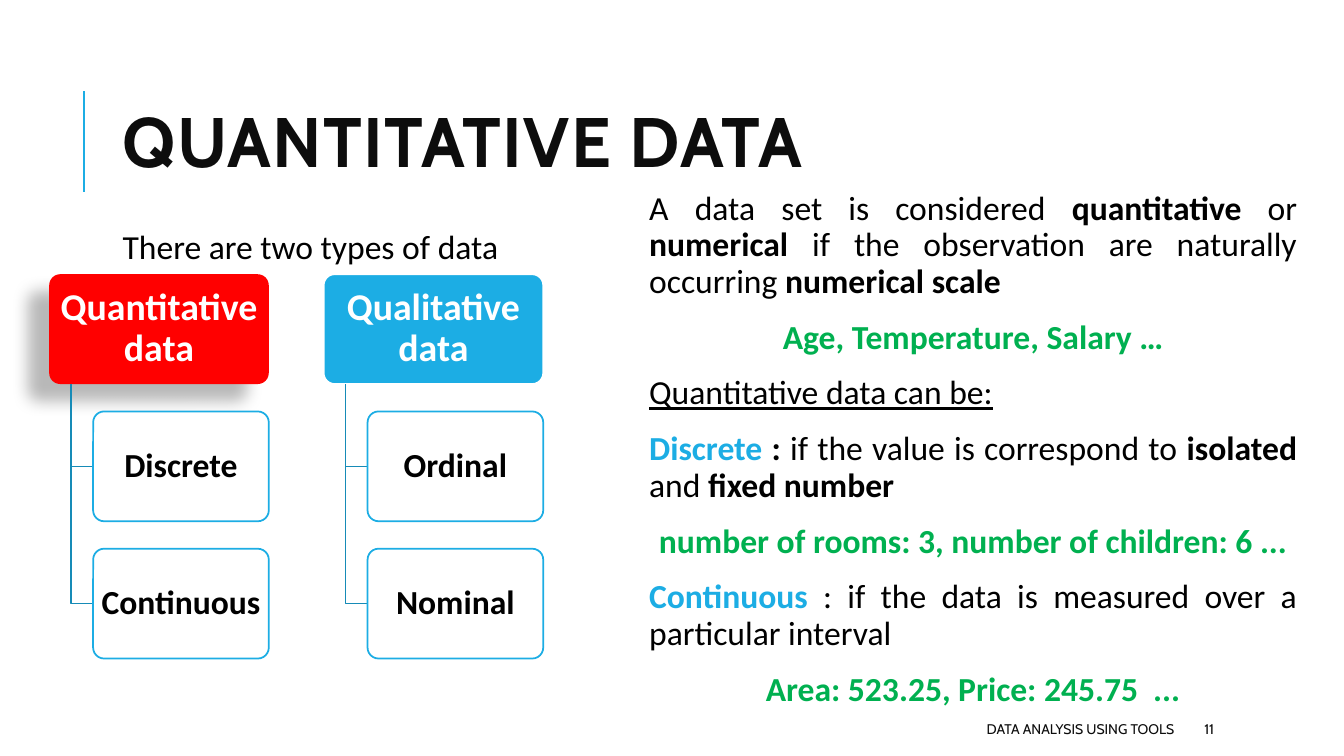
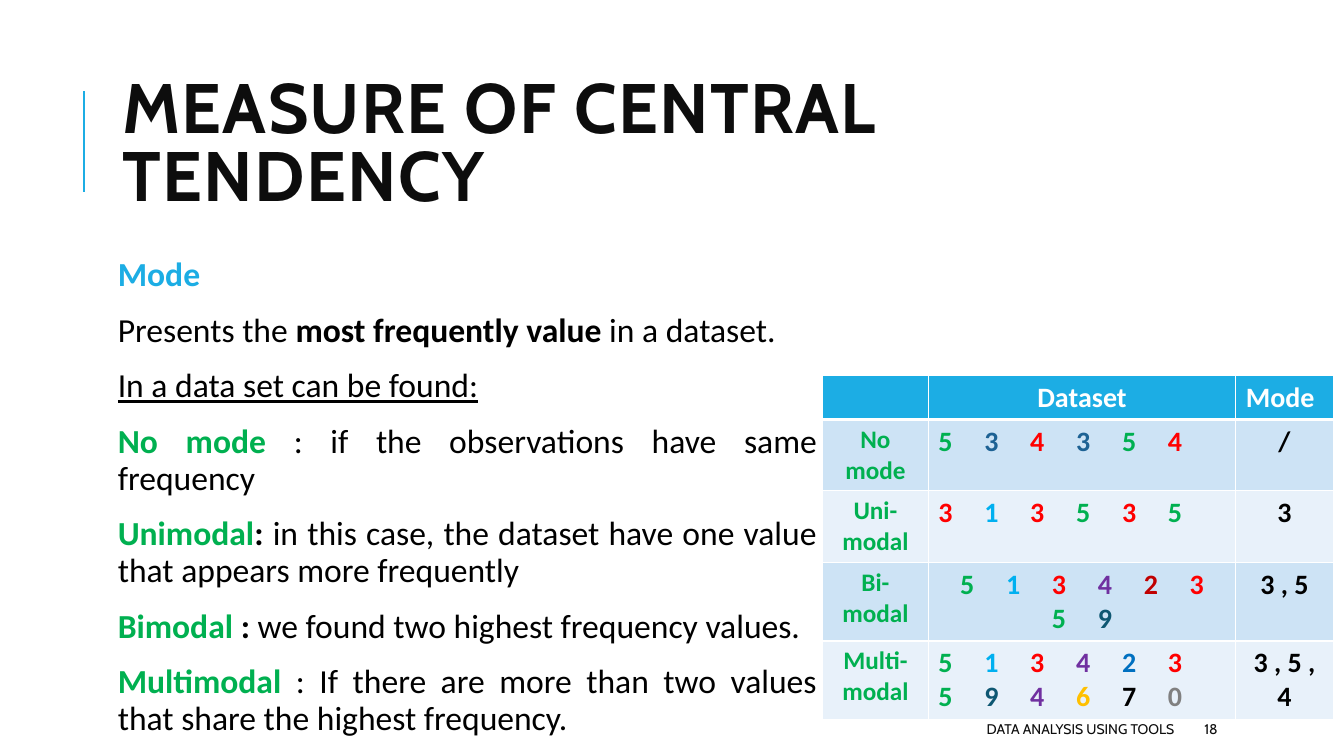
from typing import NamedTuple

from lxml.etree import SubElement
from pptx import Presentation
from pptx.dml.color import RGBColor
from pptx.enum.shapes import MSO_CONNECTOR, MSO_SHAPE
from pptx.enum.text import MSO_ANCHOR as Anchor, PP_ALIGN as Align
from pptx.oxml.ns import qn
from pptx.util import Cm, Pt

# Colours
BLACK = RGBColor(0x00, 0x00, 0x00)
WHITE = RGBColor(0xFF, 0xFF, 0xFF)
INK = RGBColor(0x0D, 0x0D, 0x0D)
ACCENT = RGBColor(0x1C, 0xAD, 0xE4)
STEM = RGBColor(0x16, 0x8B, 0xB7)
RED = RGBColor(0xFF, 0x00, 0x00)
GREEN = RGBColor(0x00, 0xB0, 0x50)
NAVY = RGBColor(0x1D, 0x62, 0x94)
SKY = RGBColor(0x00, 0xB0, 0xF0)
PURPLE = RGBColor(0x70, 0x30, 0xA0)
CRIMSON = RGBColor(0xC0, 0x00, 0x00)
BLUE = RGBColor(0x00, 0x70, 0xC0)
TEAL = RGBColor(0x0E, 0x57, 0x72)
GOLD = RGBColor(0xFF, 0xC0, 0x00)
GRAY = RGBColor(0x80, 0x80, 0x80)
BAND_DARK = RGBColor(0xCD, 0xE3, 0xF5)
BAND_LIGHT = RGBColor(0xE8, 0xF1, 0xFA)

HEADING_FONT = "Cabin"
BODY_FONT = "Calibri"
FOOTER = "DATA ANALYSIS USING TOOLS"


class Box(NamedTuple):
    """A region of the slide, in centimetres."""
    left: float
    top: float
    width: float
    height: float

    def lengths(self):
        return [Cm(value) for value in self]


class Style(NamedTuple):
    color: RGBColor = BLACK
    bold: bool = False
    underline: bool = False


PLAIN = Style()
BOLD = Style(bold=True)
UNDERLINED = Style(underline=True)
TERM = Style(ACCENT, bold=True)
EXAMPLE = Style(GREEN, bold=True)

TITLE_BOX = Box(2.84, 1.63, 27, 4.17)
FOOTER_BOX = Box(13.46, 17.98, 16.38, 0.76)
NUMBER_BOX = Box(30.1, 17.98, 2.69, 0.76)


def format_run(run, size, style=PLAIN, font=BODY_FONT):
    run.font.name = font
    run.font.size = Pt(size)
    run.font.bold = style.bold
    run.font.underline = style.underline
    run.font.color.rgb = style.color


def write(paragraph, text, size, style=PLAIN, font=BODY_FONT, align=Align.LEFT):
    paragraph.text = text
    paragraph.alignment = align
    for run in paragraph.runs:
        format_run(run, size, style, font)


def add_text_frame(slide, box, anchor=Anchor.TOP):
    frame = slide.shapes.add_textbox(*box.lengths()).text_frame
    frame.word_wrap = True
    frame.vertical_anchor = anchor
    return frame


def set_insets(frame, horizontal, vertical):
    frame.margin_left = frame.margin_right = Cm(horizontal)
    frame.margin_top = frame.margin_bottom = Cm(vertical)


# Parts shared by all slides
def add_frame(slide, title, number):
    rule = slide.shapes.add_connector(
        MSO_CONNECTOR.STRAIGHT, Cm(2.11), Cm(4.83), Cm(2.11), Cm(2.29))
    rule.line.color.rgb = ACCENT
    rule.line.width = Pt(1.5)
    SubElement(rule._element.spPr, qn("a:effectLst"))

    paragraph = add_text_frame(slide, TITLE_BOX, Anchor.MIDDLE).paragraphs[0]
    write(paragraph, title, 50, Style(INK, bold=True), HEADING_FONT)
    paragraph.line_spacing = 0.8
    paragraph.runs[0].font._element.set("spc", "100")

    for box, text, align in ((FOOTER_BOX, FOOTER, Align.RIGHT),
                             (NUMBER_BOX, str(number), Align.LEFT)):
        frame = add_text_frame(slide, box, Anchor.MIDDLE)
        write(frame.paragraphs[0], text, 10, Style(INK), HEADING_FONT, align)


# Body text: each paragraph is an alignment and its styled pieces
def add_body(slide, box, paragraphs):
    frame = add_text_frame(slide, box)
    set_insets(frame, 0.13, 0.13)
    for index, (align, pieces) in enumerate(paragraphs):
        paragraph = frame.add_paragraph() if index else frame.paragraphs[0]
        paragraph.alignment = align
        paragraph.line_spacing = 0.9
        paragraph.space_before = Pt(12)
        paragraph.space_after = Pt(2)
        for text, style in pieces:
            run = paragraph.add_run()
            run.text = text
            format_run(run, 24, style)


# Tree of data types
def add_node(slide, box, text, size, text_color, fill, line=None):
    node = slide.shapes.add_shape(MSO_SHAPE.ROUNDED_RECTANGLE, *box.lengths())
    node.adjustments[0] = 0.1
    node.shadow.inherit = False
    node.fill.solid()
    node.fill.fore_color.rgb = fill
    if line is None:
        node.line.fill.background()
    else:
        node.line.color.rgb = line
        node.line.width = Pt(1.25)
    frame = node.text_frame
    frame.word_wrap = True
    frame.vertical_anchor = Anchor.MIDDLE
    set_insets(frame, 0.12, 0.08)
    write(frame.paragraphs[0], text, size, Style(text_color, bold=True),
          align=Align.CENTER)
    frame.paragraphs[0].line_spacing = 0.9
    return node


def add_drop_shadow(shape):
    effects = shape._element.spPr.find(qn("a:effectLst"))
    shadow = SubElement(effects, qn("a:outerShdw"), blurRad=str(Pt(11.8)),
                        dist=str(Pt(19.7)), dir="8460000", rotWithShape="0")
    color = SubElement(shadow, qn("a:srgbClr"), val=str(BLACK))
    SubElement(color, qn("a:alpha"), val="28000")


def add_stem(slide, left, top, right, bottom):
    builder = slide.shapes.build_freeform(Cm(left), Cm(top))
    builder.add_line_segments(
        [(Cm(left), Cm(bottom)), (Cm(right), Cm(bottom))], close=False)
    stem = builder.convert_to_shape()
    stem.shadow.inherit = False
    stem.fill.background()
    stem.line.color.rgb = STEM
    stem.line.width = Pt(1.25)


def add_tree(slide, box, branches):
    # Columns are a quarter of a node apart, rows a quarter of its height
    count = len(branches)
    width = box.width / (count + 0.25 * (count - 1))
    height = width / 2
    for column, (heading, fill, line, children) in enumerate(branches):
        left = box.left + column * 1.25 * width
        head = add_node(slide, Box(left, box.top, width, height),
                        heading, 27, WHITE, fill, line)
        if fill == RED:
            add_drop_shadow(head)
        for row, child in enumerate(children, 1):
            top = box.top + row * 1.25 * height
            child_left = left + 0.2 * width
            add_stem(slide, left + 0.1 * width, box.top + height,
                     child_left, top + height / 2)
            add_node(slide, Box(child_left, top, 0.8 * width, height),
                     child, 24, BLACK, WHITE, ACCENT)


# Table of modes
def style_cell(cell, fill, bottom=1):
    cell.fill.solid()
    cell.fill.fore_color.rgb = fill
    properties = cell._tc.get_or_add_tcPr()
    sides = (("lnL", 1), ("lnR", 1), ("lnT", 1), ("lnB", bottom))
    for index, (side, points) in enumerate(sides):
        border = SubElement(properties, qn(f"a:{side}"), w=str(Pt(points)))
        solid = SubElement(border, qn("a:solidFill"))
        SubElement(solid, qn("a:srgbClr"), val=str(WHITE))
        properties.insert(index, border)


def write_digits(paragraph, digits, align):
    paragraph.alignment = align
    for index, (digit, color) in enumerate(digits):
        if index:
            gap = paragraph.add_run()
            gap.text = " "
            format_run(gap, 20, BOLD)
            gap.font._element.set("spc", "1810")
        run = paragraph.add_run()
        run.text = str(digit)
        format_run(run, 20, Style(color, bold=True))


def add_mode_table(slide, box, rows):
    table = slide.shapes.add_table(len(rows) + 1, 3, *box.lengths()).table
    for column, share in zip(table.columns, (0.207, 0.602, 0.191)):
        column.width = Cm(box.width * share)
    for row, height in zip(table.rows, (1.11, 1.8, 1.8, 1.98, 1.98)):
        row.height = Cm(height)

    headings = (("", Align.LEFT), ("Dataset", Align.CENTER), ("Mode", Align.LEFT))
    for column, (text, align) in enumerate(headings):
        cell = table.cell(0, column)
        style_cell(cell, ACCENT, bottom=3)
        write(cell.text_frame.paragraphs[0], text, 20,
              Style(WHITE, bold=True), align=align)

    for index, (name, digits, align, mode) in enumerate(rows, 1):
        cells = [table.cell(index, column) for column in range(3)]
        for cell in cells:
            style_cell(cell, BAND_DARK if index % 2 else BAND_LIGHT)
        label, dataset, result = [cell.text_frame.paragraphs[0] for cell in cells]
        write(label, name, 18, EXAMPLE, align=Align.CENTER)
        write_digits(dataset, digits, align)
        write(result, mode, 20, BOLD, align=Align.CENTER)


def build_quantitative(slide):
    add_frame(slide, "QUANTITATIVE DATA", 11)
    add_body(slide, Box(16.23, 4.7, 16.59, 12.17), [
        (Align.JUSTIFY, [("A data set is considered ", PLAIN), ("quantitative", BOLD),
                         (" or ", PLAIN), ("numerical", BOLD),
                         (" if the observation are naturally occurring ", PLAIN),
                         ("numerical scale", BOLD)]),
        (Align.CENTER, [("Age, Temperature, Salary …", EXAMPLE)]),
        (Align.JUSTIFY, [("Quantitative data can be:", UNDERLINED)]),
        (Align.JUSTIFY, [("Discrete", TERM), (" :", BOLD),
                         (" if the value is correspond to ", PLAIN),
                         ("isolated", BOLD), (" and ", PLAIN),
                         ("fixed number", BOLD)]),
        (Align.CENTER, [("number of rooms: 3, number of children: 6 ...", EXAMPLE)]),
        (Align.JUSTIFY, [("Continuous", TERM),
                         (" : if the data is measured over a particular interval", PLAIN)]),
        (Align.CENTER, [("Area: 523.25, Price: 245.75  ...", EXAMPLE)]),
    ])
    add_tree(slide, Box(1.24, 6.91, 12.45, 9.68), [
        ("Quantitative data", RED, None, ("Discrete", "Continuous")),
        ("Qualitative data", ACCENT, WHITE, ("Ordinal", "Nominal")),
    ])
    caption = add_text_frame(slide, Box(2.84, 5.56, 10.62, 1.27))
    write(caption.paragraphs[0], "There are two types of data", 24)


def build_mode(slide):
    add_frame(slide, "MEASURE OF CENTRAL TENDENCY", 18)
    texts = [
        [("Mode", TERM)],
        [("Presents the ", PLAIN), ("most frequently value", BOLD),
         (" in a dataset.", PLAIN)],
        [("In a data set can be found:", UNDERLINED)],
        [("No mode ", EXAMPLE),
         (": if the observations have same frequency", PLAIN)],
        [("Unimodal", EXAMPLE), (": ", BOLD),
         ("in this case, the dataset have one value that appears more frequently", PLAIN)],
        [("Bimodal", EXAMPLE), (" : ", BOLD),
         ("we found two highest frequency values.", PLAIN)],
        [("Multimodal ", EXAMPLE),
         (": If there are more than two values that share the highest frequency.", PLAIN)],
    ]
    add_body(slide, Box(2.84, 6.35, 17.88, 11.18),
             [(Align.JUSTIFY, pieces) for pieces in texts])
    add_mode_table(slide, Box(20.73, 9.46, 12.87, 8.67), [
        ("No mode", zip((5, 3, 4, 3, 5, 4), (GREEN, NAVY, RED, NAVY, GREEN, RED)),
         Align.LEFT, "/"),
        ("Uni-modal", zip((3, 1, 3, 5, 3, 5), (RED, SKY, RED, GREEN, RED, GREEN)),
         Align.LEFT, "3"),
        ("Bi-modal", zip((5, 1, 3, 4, 2, 3, 5, 9),
                         (GREEN, SKY, RED, PURPLE, CRIMSON, RED, GREEN, TEAL)),
         Align.CENTER, "3 , 5"),
        ("Multi-modal", zip((5, 1, 3, 4, 2, 3, 5, 9, 4, 6, 7, 0),
                            (GREEN, SKY, RED, PURPLE, BLUE, RED,
                             GREEN, TEAL, PURPLE, GOLD, BLACK, GRAY)),
         Align.LEFT, "3 , 5 , 4"),
    ])


def main():
    presentation = Presentation()
    presentation.slide_width = Cm(33.87)
    presentation.slide_height = Cm(19.05)
    for build in (build_quantitative, build_mode):
        build(presentation.slides.add_slide(presentation.slide_layouts[6]))
    presentation.save("out.pptx")


if __name__ == "__main__":
    main()
